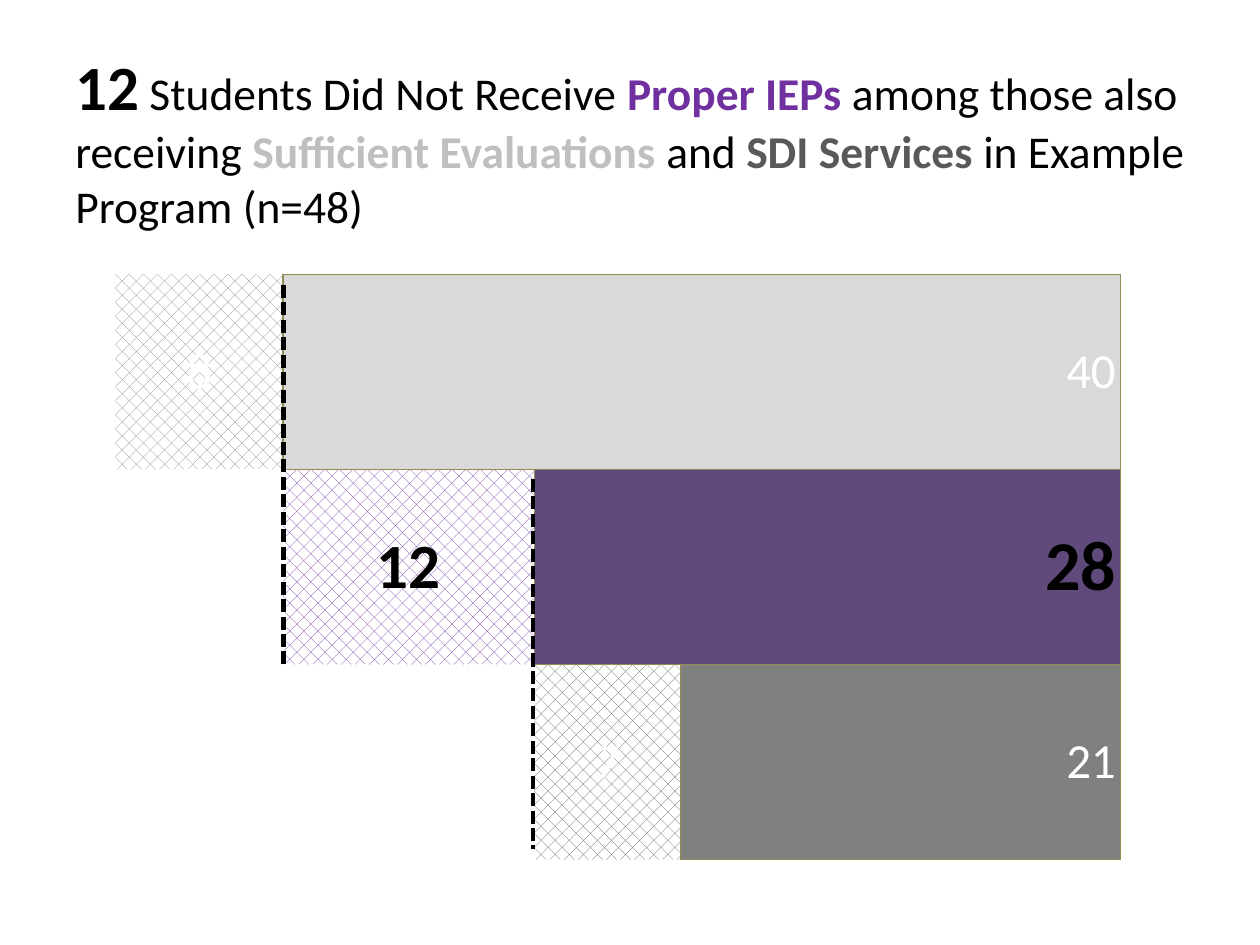
from dataclasses import dataclass

from lxml import etree
from pptx import Presentation
from pptx.chart.data import CategoryChartData
from pptx.dml.color import RGBColor
from pptx.enum.chart import XL_CHART_TYPE, XL_LABEL_POSITION
from pptx.enum.dml import MSO_LINE, MSO_PATTERN
from pptx.enum.shapes import MSO_CONNECTOR
from pptx.enum.text import MSO_ANCHOR
from pptx.oxml.ns import qn
from pptx.util import Inches, Pt

STACKED = XL_CHART_TYPE.BAR_STACKED
CENTER = XL_LABEL_POSITION.CENTER
INSIDE_END = XL_LABEL_POSITION.INSIDE_END
HATCH = MSO_PATTERN.PERCENT_25
DASH = MSO_LINE.SQUARE_DOT
STRAIGHT = MSO_CONNECTOR.STRAIGHT
MIDDLE = MSO_ANCHOR.MIDDLE

FONT = "Calibri"
COLORS = {
    "black": "000000", "white": "FFFFFF", "violet": "7030A0",
    "silver": "BFBFBF", "slate": "595959", "gray": "808080",
    "plum": "604A7B", "light": "D9D9D9", "olive": "948A54",
}


@dataclass
class Part:
    text: str
    color: str = "black"
    bold: bool = False
    size: int = 26


@dataclass
class Band:
    name: str
    values: tuple
    colors: tuple
    hatch: bool = False
    edge: str = ""
    place: object = None
    focus: int = 0


@dataclass
class Guide:
    x: float
    top: float
    end: float


PARTS = [
    Part("12", bold=True, size=36),
    Part(" Students Did Not Receive "),
    Part("Proper IEPs ", "violet", True),
    Part("among those also receiving "),
    Part("Sufficient Evaluations ", "silver", True),
    Part("and "),
    Part("SDI Services ", "slate", True),
    Part("in Example Program (n=48)"),
]
BANDS = [
    Band("Series 1", (20, 8, 0), ("white",) * 3),
    Band("Series 2", (7, 12, 8), ("slate", "violet", "gray"), True,
         place=CENTER, focus=36),
    Band("Series 3", (21, 28, 40), ("gray", "plum", "light"),
         edge="olive", place=INSIDE_END, focus=40),
]
GUIDES = [Guide(2.25, 2.26, 5.27), Guide(4.23, 3.8, 6.74)]


def rgb(name: str) -> RGBColor:
    """Return the named colour."""
    return RGBColor.from_string(COLORS[name])


def style(font, size: int, color: str, bold: bool = False) -> None:
    """Set the face, size, colour and weight of a font."""
    font.name, font.size, font.bold = FONT, Pt(size), bold
    font.color.rgb = rgb(color)


def add_title(slide, parts: list[Part]) -> None:
    """Add the headline with its coloured key words."""
    box = slide.shapes.add_textbox(Inches(0.5), Inches(0.3), Inches(9), Inches(1.62))
    frame = box.text_frame
    frame.word_wrap = True
    frame.vertical_anchor = MIDDLE
    for part in parts:
        run = frame.paragraphs[0].add_run()
        run.text = part.text
        style(run.font, part.size, part.color, part.bold)


def paint(form, band: Band, color: str) -> None:
    """Fill and outline one bar."""
    if band.hatch:
        form.fill.patterned()
        form.fill.pattern = HATCH
        form.fill.fore_color.rgb = rgb(color)
        form.fill.back_color.rgb = rgb("white")
    else:
        form.fill.solid()
        form.fill.fore_color.rgb = rgb(color)
    if band.edge:
        form.line.color.rgb = rgb(band.edge)
        form.line.width = Pt(0.75)
    else:
        form.line.fill.background()


def format_band(series, band: Band) -> None:
    """Paint the bars of a series and set its labels."""
    paint(series.format, band, band.colors[0])
    for index, color in enumerate(band.colors):
        paint(series.points[index].format, band, color)
    if band.place is None:
        return
    labels = series.data_labels
    labels.show_value = True
    labels.position = band.place
    style(labels.font, 28, "white")
    label = series.points[1].data_label
    style(label.font, band.focus, "black", True)
    label.position = band.place


def add_bars(slide, bands: list[Band]) -> None:
    """Add the stacked bar chart."""
    data = CategoryChartData()
    data.categories = ["1", "2", "3"]
    for band in bands:
        data.add_series(band.name, band.values)
    chart = slide.shapes.add_chart(
        STACKED, Inches(0.75), Inches(2.08), Inches(8.31), Inches(4.84), data).chart
    chart.has_legend = chart.has_title = False
    style(chart.font, 10, "black")
    axis = chart.value_axis
    axis.minimum_scale, axis.maximum_scale, axis.major_unit = 0, 48, 48
    grid = axis.major_gridlines.format.line
    grid.color.rgb = rgb("light")
    grid.width = Pt(0.75)
    axis.visible = chart.category_axis.visible = False
    plot = chart.plots[0]
    plot.gap_width, plot.overlap = 0, 100
    plot.vary_by_categories = False
    for series, band in zip(plot.series, bands):
        format_band(series, band)


def add_guide(slide, guide: Guide) -> None:
    """Add a dashed upright line."""
    x = Inches(guide.x)
    line = slide.shapes.add_connector(
        STRAIGHT, x, Inches(guide.top), x, Inches(guide.end))
    line.line.color.rgb = rgb("black")
    line.line.width = Pt(2.5)
    line.line.dash_style = DASH
    etree.SubElement(line._element.spPr, qn("a:effectLst"))


def main() -> None:
    """Build and save the slide."""
    deck = Presentation()
    deck.slide_width, deck.slide_height = Inches(10), Inches(7.5)
    slide = deck.slides.add_slide(deck.slide_layouts[6])
    add_title(slide, PARTS)
    add_bars(slide, BANDS)
    for guide in GUIDES:
        add_guide(slide, guide)
    deck.save("out.pptx")


if __name__ == "__main__":
    main()
